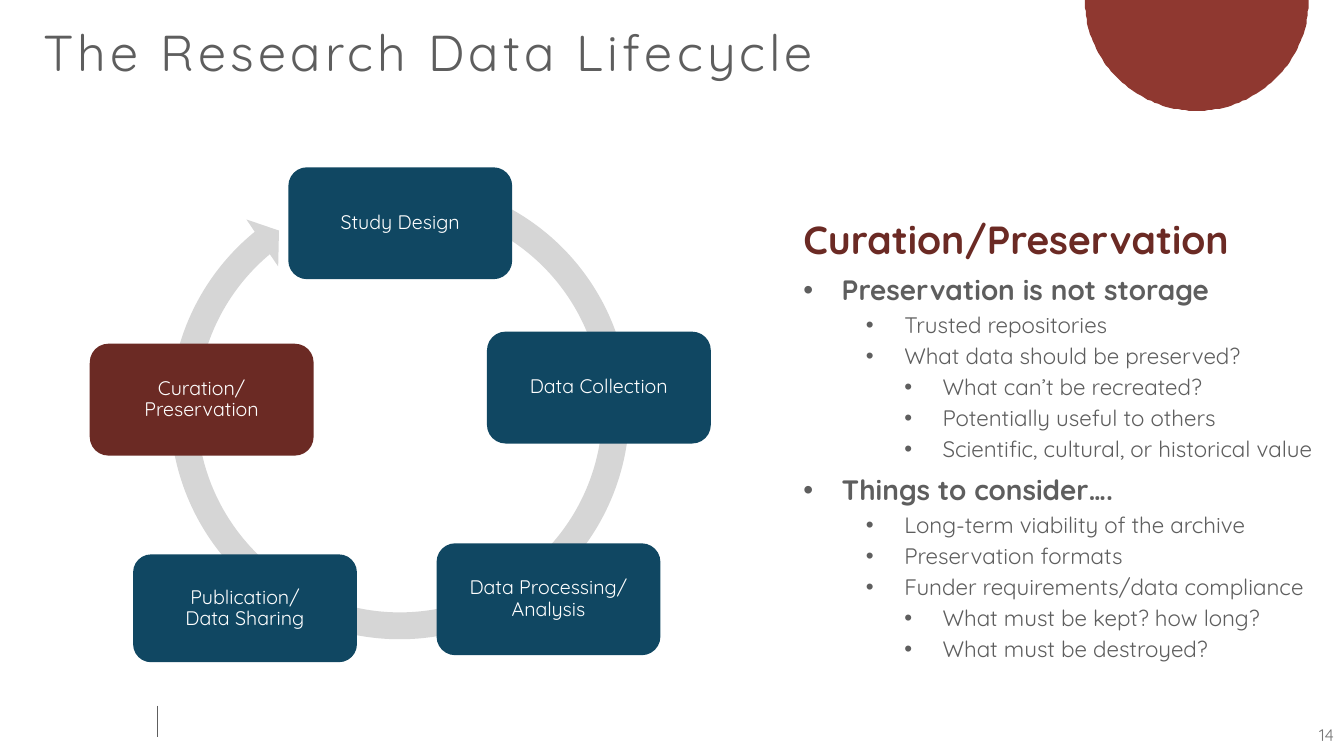
from dataclasses import dataclass
from math import cos, pi, sin

from lxml import etree
from pptx import Presentation
from pptx.dml.color import RGBColor
from pptx.enum.shapes import MSO_CONNECTOR, MSO_SHAPE
from pptx.enum.text import MSO_ANCHOR, PP_ALIGN
from pptx.oxml.ns import qn
from pptx.util import Pt

EMU_PER_PX = 9144
BLANK_LAYOUT = 6
STRAIGHT = MSO_CONNECTOR.STRAIGHT
ROUNDED = MSO_SHAPE.ROUNDED_RECTANGLE
CIRCULAR_ARROW = MSO_SHAPE.CIRCULAR_ARROW
TOP, MIDDLE = MSO_ANCHOR.TOP, MSO_ANCHOR.MIDDLE
LEFT, CENTER, RIGHT = PP_ALIGN.LEFT, PP_ALIGN.CENTER, PP_ALIGN.RIGHT


@dataclass(frozen=True)
class Theme:
    font: str = "Quicksand"
    bullet_font: str = "Arial"
    text: str = "5E5E5E"
    number: str = "767676"
    stage: str = "104762"
    current: str = "6B2A24"
    ring: str = "D6D6D6"
    accent: str = "8F3830"
    white: str = "FFFFFF"
    title_size: int = 36
    heading_size: int = 28
    topic_size: int = 20
    detail_size: int = 16
    stage_size: int = 14
    number_size: int = 12


def px(length):
    return round(length * EMU_PER_PX)


def apply(target, formats):
    for attribute, value in formats.items():
        setattr(target, attribute, value)


class SlideBuilder:
    def __init__(self, slide, theme):
        self.slide = slide
        self.shapes = slide.shapes
        self.theme = theme

    def paint(self, shape, color):
        shape.shadow.inherit = False
        shape.fill.solid()
        shape.fill.fore_color.rgb = RGBColor.from_string(color)
        shape.line.fill.background()

    def preset(self, kind, box, color, adjustments=()):
        shape = self.shapes.add_shape(kind, *map(px, box))
        self.paint(shape, color)
        for index, value in enumerate(adjustments):
            shape.adjustments[index] = value
        return shape

    def half_disc(self, center, width, height, color, steps=90):
        points = [
            (center + width / 2 * cos(pi * step / steps), height * sin(pi * step / steps))
            for step in range(steps + 1)
        ]
        outline = self.shapes.build_freeform(*points[0], scale=EMU_PER_PX)
        outline.add_line_segments(points[1:], close=True)
        self.paint(outline.convert_to_shape(), color)

    def rule(self, x, top, bottom, color):
        rule = self.shapes.add_connector(STRAIGHT, px(x), px(top), px(x), px(bottom))
        rule.line.color.rgb = RGBColor.from_string(color)
        rule.line.width = Pt(0.5)
        etree.SubElement(rule._element.spPr, qn("a:effectLst"))

    def text_frame(self, box, anchor=TOP):
        frame = self.shapes.add_textbox(*map(px, box)).text_frame
        apply(frame, {"word_wrap": True, "vertical_anchor": anchor})
        return frame

    def fill_text(self, paragraph, text, size, color, bold=False, tracking=0, **formats):
        paragraph.text = text
        apply(paragraph, formats)
        for run in paragraph.runs:
            apply(run.font, {"name": self.theme.font, "size": Pt(size), "bold": bold})
            run.font.color.rgb = RGBColor.from_string(color)
            if tracking:
                run.font._element.set("spc", str(tracking))

    def bullet(self, paragraph, margin, hanging):
        properties = paragraph._p.get_or_add_pPr()
        properties.set("marL", str(px(margin)))
        properties.set("indent", str(-px(hanging)))
        etree.SubElement(properties, qn("a:buFont"), typeface=self.theme.bullet_font)
        etree.SubElement(properties, qn("a:buChar"), char="•")

    def label(self, box, text, size, color, anchor=TOP, **formats):
        frame = self.text_frame(box, anchor)
        self.fill_text(frame.paragraphs[0], text, size, color, **formats)

    def stage(self, box, text, color):
        frame = self.preset(ROUNDED, box, color).text_frame
        inset = px(11)
        apply(frame, {
            "word_wrap": True, "vertical_anchor": MIDDLE,
            "margin_left": inset, "margin_right": inset,
            "margin_top": inset, "margin_bottom": inset,
        })
        self.fill_text(frame.paragraphs[0], text, self.theme.stage_size,
                       self.theme.white, alignment=CENTER, line_spacing=0.9)

    def outline(self, box, heading, points):
        theme = self.theme
        levels = (
            (38, theme.topic_size, True, 10),
            (100, theme.detail_size, False, 5),
            (138, theme.detail_size, False, 5),
        )
        frame = self.text_frame(box)
        self.fill_text(frame.paragraphs[0], heading, theme.heading_size,
                       theme.current, bold=True)
        for level, text in points:
            margin, size, bold, gap = levels[level]
            paragraph = frame.add_paragraph()
            self.bullet(paragraph, margin, 38)
            self.fill_text(paragraph, text, size, theme.text, bold=bold,
                           line_spacing=0.9, space_before=Pt(gap))


def main():
    theme = Theme()
    deck = Presentation()
    apply(deck, {"slide_width": px(1333), "slide_height": px(750)})
    builder = SlideBuilder(deck.slides.add_slide(deck.slide_layouts[BLANK_LAYOUT]), theme)

    builder.half_disc(1187, 222, 110, theme.accent)
    builder.rule(156, 700, 731, theme.text)
    builder.label((1276, 709, 57, 40), "14", theme.number_size, theme.number,
                  anchor=MIDDLE, alignment=RIGHT)
    builder.label((33, 23, 1036, 65), "The Research Data Lifecycle", theme.title_size,
                  theme.text, tracking=300, alignment=LEFT, line_spacing=0.9)

    builder.outline((787, 209, 528, 500), "Curation/Preservation", (
        (0, "Preservation is not storage"),
        (1, "Trusted repositories"),
        (1, "What data should be preserved?"),
        (2, "What can’t be recreated?"),
        (2, "Potentially useful to others"),
        (2, "Scientific, cultural, or historical value"),
        (0, "Things to consider…."),
        (1, "Long-term viability of the archive"),
        (1, "Preservation formats"),
        (1, "Funder requirements/data compliance"),
        (2, "What must be kept? how long?"),
        (2, "What must be destroyed?"),
    ))

    builder.preset(CIRCULAR_ARROW, (154, 164, 485, 485), theme.ring,
                   (0.055, 3.307, 138.305, 173.528, 0.058))
    for left, top, height, text, color in (
        (286, 166, 111, "Study Design", theme.stage),
        (483, 329, 111, "Data Collection", theme.stage),
        (433, 539, 111, "Data Processing/\vAnalysis", theme.stage),
        (132, 550, 107, "Publication/\vData Sharing", theme.stage),
        (89, 341, 111, "Curation/\vPreservation", theme.current),
    ):
        builder.stage((left, top, 222, height), text, color)

    deck.save("out.pptx")


if __name__ == "__main__":
    main()
